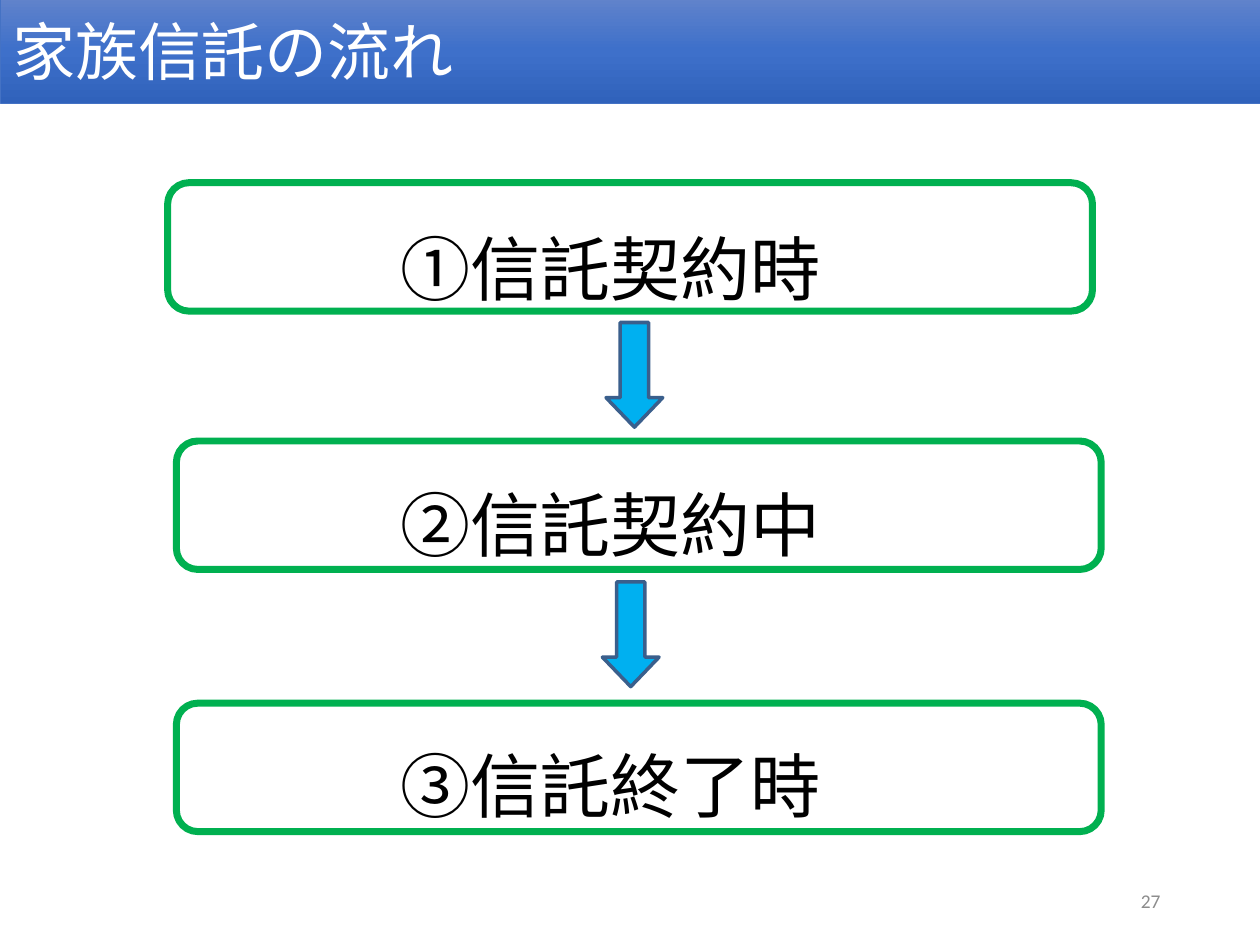
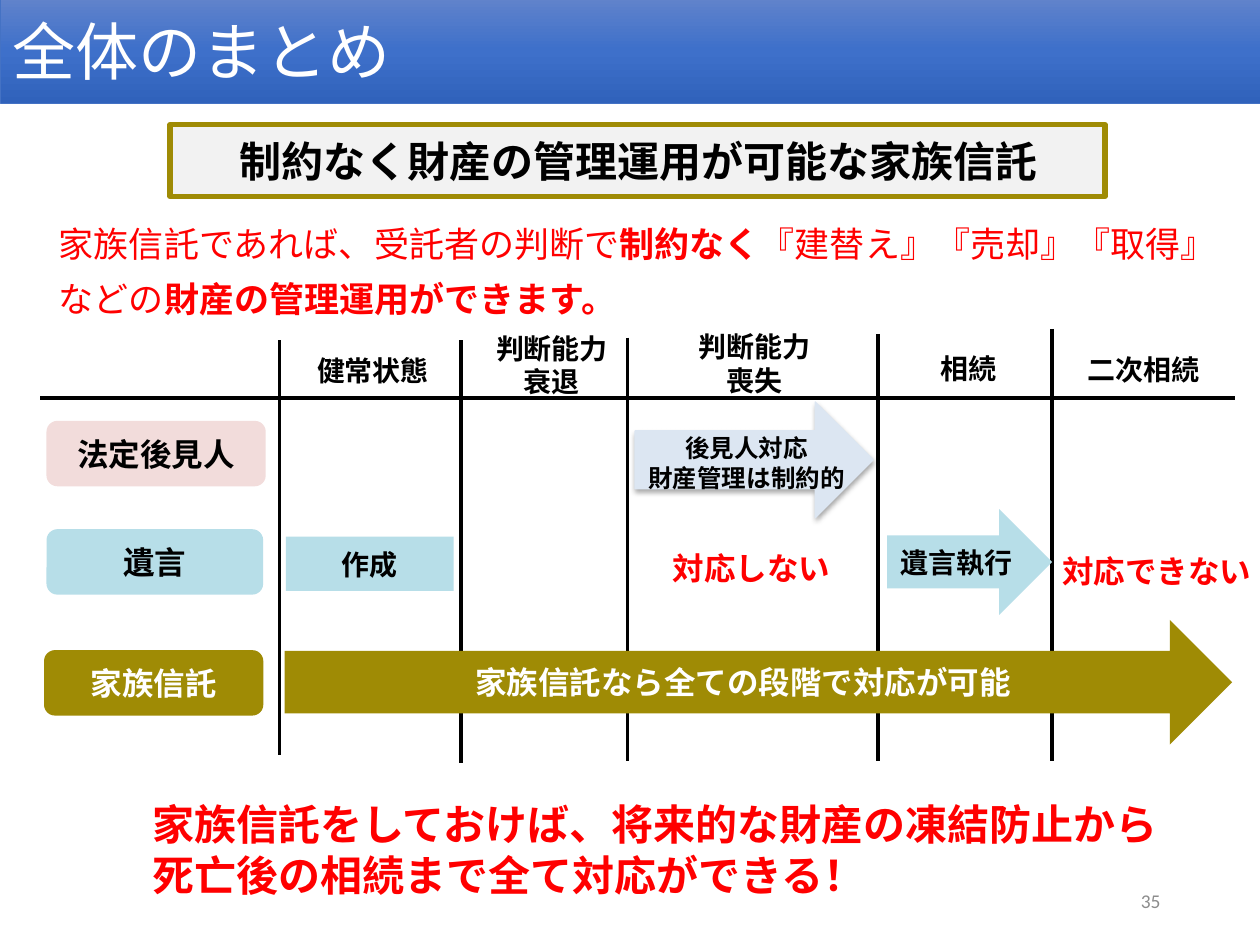
import copy
from dataclasses import dataclass
from typing import NamedTuple, Optional, Union

import lxml.etree
import pptx
import pptx.dml.color
import pptx.enum.shapes
import pptx.enum.text
import pptx.oxml.ns
import pptx.util

Pt = pptx.util.Pt
RGBColor = pptx.dml.color.RGBColor
Geometry = pptx.enum.shapes.MSO_SHAPE
Align = pptx.enum.text.PP_ALIGN
Anchor = pptx.enum.text.MSO_ANCHOR
AutoSize = pptx.enum.text.MSO_AUTO_SIZE
qn = pptx.oxml.ns.qn

BLACK = RGBColor(0x00, 0x00, 0x00)
WHITE = RGBColor(0xFF, 0xFF, 0xFF)
RED = RGBColor(0xFF, 0x00, 0x00)
GREY = RGBColor(0x8C, 0x8C, 0x8C)
PALE_GREY = RGBColor(0xF2, 0xF2, 0xF2)
GREEN = RGBColor(0x00, 0xB0, 0x50)
SKY = RGBColor(0x00, 0xB0, 0xF0)
STEEL = RGBColor(0x3A, 0x5F, 0x8C)
OLIVE = RGBColor(0x9F, 0x8B, 0x05)
PINK = RGBColor(0xF2, 0xDC, 0xDB)
AQUA = RGBColor(0xB7, 0xDE, 0xE8)
PALE_BLUE = RGBColor(0xDC, 0xE6, 0xF2)
BAND_EDGE = RGBColor(0x44, 0x72, 0xC4)
BAND_STOPS = (
    (0, RGBColor(0x61, 0x83, 0xCB)),
    (0.5, RGBColor(0x3E, 0x70, 0xCA)),
    (1, RGBColor(0x30, 0x62, 0xBB)),
)
JAPANESE = "Noto Sans CJK JP"


class Box(NamedTuple):
    left: float
    top: float
    width: float
    height: float


class Span(NamedTuple):
    text: str
    bold: bool


Line = Union[str, tuple[Span, ...]]


@dataclass(frozen=True)
class Style:
    size: float
    color: RGBColor = BLACK
    bold: bool = False
    font: str = JAPANESE
    align: Align = Align.CENTER
    spacing: Optional[float] = None


@dataclass(frozen=True)
class Label:
    box: Box
    lines: tuple[Line, ...]
    style: Style
    anchor: Anchor = Anchor.TOP


@dataclass(frozen=True)
class Panel:
    geometry: Geometry
    box: Box
    fill: Optional[RGBColor] = None
    edge: Optional[RGBColor] = None
    edge_width: float = 0
    text: str = ""
    style: Optional[Style] = None


class Rule(NamedTuple):
    x1: float
    y1: float
    x2: float
    y2: float


TITLE = Style(36, WHITE, align=Align.LEFT)
PAGE = Style(11.1, GREY, font="Calibri", align=Align.RIGHT)
STEP = Style(40, font="Arial", align=Align.LEFT, spacing=1.5)
HEADLINE = Style(24, bold=True, font="Calibri", align=Align.LEFT)
INTRO = Style(20, RED, align=Align.LEFT, spacing=1.3)
STAGE = Style(16, bold=True)
SCHEME = Style(18, bold=True)
SCHEME_LIGHT = Style(18, WHITE, bold=True)
WARNING = Style(18, RED, bold=True)
NOTE = Style(14, bold=True)
CONCLUSION = Style(24, RED, bold=True, font="Arial", align=Align.LEFT)

STEPS = (
    ("①信託契約時", 101.5, Box(95.8, 104.4, 528.5, 73.4)),
    ("②信託契約中", 247.7, Box(100.8, 252, 528.5, 73.4)),
    ("③信託終了時", 396.7, Box(100.8, 401.8, 528.5, 73.4)),
)
STEP_ARROWS = (Box(332.6, 198, 59.8, 32.4), Box(330.5, 346.3, 59.8, 32.4))

RULES = (
    Rule(159.8, 194.4, 159.8, 431.3),
    Rule(263.5, 194.4, 263.5, 436.3),
    Rule(358.6, 193, 358.6, 434.9),
    Rule(501.8, 190.8, 501.8, 434.9),
    Rule(601.2, 187.9, 601.2, 434.9),
    Rule(23, 227.5, 705.6, 227.5),
)
SCHEMES = (
    Panel(Geometry.ROUNDED_RECTANGLE, Box(26.6, 240.5, 125.3, 37.4), PINK,
          text="法定後見人", style=SCHEME),
    Panel(Geometry.ROUNDED_RECTANGLE, Box(26.6, 302.4, 123.8, 37.4), AQUA,
          text="遺言", style=SCHEME),
    Panel(Geometry.ROUNDED_RECTANGLE, Box(25.2, 371.5, 125.3, 37.4), OLIVE,
          text="家族信託", style=SCHEME_LIGHT),
)
COVERAGE = (
    Panel(Geometry.RECTANGLE, Box(163.4, 306.7, 95.8, 31), AQUA, text="作成", style=STAGE),
    Panel(Geometry.RIGHT_ARROW, Box(506.9, 290.9, 94.3, 60.5), AQUA,
          text="遺言執行", style=STAGE),
    Panel(Geometry.RIGHT_ARROW, Box(162.7, 354.2, 541.4, 71.3), OLIVE,
          text="家族信託なら全ての段階で対応が可能", style=SCHEME_LIGHT),
)
GUARDIAN_ARROW = Panel(Geometry.RIGHT_ARROW, Box(362.9, 229.7, 136.1, 66.2),
                       PALE_BLUE, PALE_BLUE, 0.75)
HEADLINE_PANEL = Panel(Geometry.RECTANGLE, Box(97.2, 71.3, 534.2, 41), PALE_GREY, OLIVE, 3,
                       "制約なく財産の管理運用が可能な家族信託", HEADLINE)
SUMMARY_LABELS = (
    Label(Box(144.7, 198.7, 136.8, 26.6), ("健常状態",), STAGE),
    Label(Box(247, 185.8, 136.8, 46), ("判断能力", "衰退"), STAGE),
    Label(Box(386.6, 185, 89.3, 46), ("判断能力", "喪失"), STAGE),
    Label(Box(510.5, 197.3, 86.4, 26.6), ("相続",), STAGE),
    Label(Box(604.8, 198, 97.2, 26.6), ("二次相続",), STAGE),
    Label(Box(360, 244.1, 133.2, 41), ("後見人対応", "財産管理は制約的"), NOTE),
    Label(Box(374.4, 310.3, 110.2, 28.8), ("対応しない",), WARNING),
    Label(Box(598.3, 311.8, 125.3, 28.8), ("対応できない",), WARNING),
    Label(
        Box(26.6, 116.6, 679, 68.4),
        (
            (Span("家族信託であれば、受託者の判断で", False), Span("制約なく", True),
             Span("『建替え』『売却』『取得』", False)),
            (Span("などの", False), Span("財産の管理運用ができます。", True)),
        ),
        INTRO,
    ),
    Label(
        Box(79.9, 452.9, 640.8, 66.2),
        ("家族信託をしておけば、将来的な財産の凍結防止から", "死亡後の相続まで全て対応ができる！"),
        CONCLUSION,
    ),
)


def points(values: tuple[float, ...]) -> list[pptx.util.Length]:
    return [Pt(value) for value in values]


def write(frame: pptx.text.text.TextFrame, lines: tuple[Line, ...], style: Style,
          anchor: Anchor) -> None:
    frame.word_wrap = True
    frame.auto_size = AutoSize.NONE
    frame.vertical_anchor = anchor
    for index, line in enumerate(lines):
        paragraph = frame.add_paragraph() if index else frame.paragraphs[0]
        paragraph.alignment = style.align
        if style.spacing:
            paragraph.line_spacing = style.spacing
        font = paragraph.font
        font.name, font.size, font.bold = style.font, Pt(style.size), style.bold
        font.color.rgb = style.color
        defaults = paragraph._p.pPr.find(qn("a:defRPr"))
        lxml.etree.SubElement(defaults, qn("a:ea"), typeface=JAPANESE)
        if isinstance(line, str):
            paragraph.add_run().text = line
            continue
        for span in line:
            run = paragraph.add_run()
            run.text, run.font.bold = span.text, span.bold


def add_label(slide: pptx.slide.Slide, label: Label) -> None:
    textbox = slide.shapes.add_textbox(*points(label.box))
    write(textbox.text_frame, label.lines, label.style, label.anchor)


def add_panel(slide: pptx.slide.Slide, panel: Panel) -> pptx.shapes.autoshape.Shape:
    shape = slide.shapes.add_shape(panel.geometry, *points(panel.box))
    shape.shadow.inherit = False
    if panel.fill is None:
        shape.fill.background()
    else:
        shape.fill.solid()
        shape.fill.fore_color.rgb = panel.fill
    if panel.edge is None:
        shape.line.fill.background()
    else:
        shape.line.color.rgb = panel.edge
        shape.line.width = Pt(panel.edge_width)
    if panel.style:
        write(shape.text_frame, (panel.text,), panel.style, Anchor.MIDDLE)
    return shape


def add_rule(slide: pptx.slide.Slide, rule: Rule) -> None:
    connector = slide.shapes.add_connector(
        pptx.enum.shapes.MSO_CONNECTOR.STRAIGHT, *points(rule))
    connector.line.color.rgb = BLACK
    connector.line.width = Pt(2)
    lxml.etree.SubElement(connector._element.spPr, qn("a:effectLst"))


def cast_shadow(shape: pptx.shapes.autoshape.Shape) -> None:
    effects = shape._element.spPr.find(qn("a:effectLst"))
    shadow = lxml.etree.SubElement(
        effects, qn("a:outerShdw"), blurRad=str(Pt(3.1)), dist=str(Pt(1.8)),
        dir="5400000", rotWithShape="0")
    color = lxml.etree.SubElement(shadow, qn("a:srgbClr"), val="000000")
    lxml.etree.SubElement(color, qn("a:alpha"), val="35000")


def add_titled_slide(deck: pptx.presentation.Presentation, heading: str,
                     page: str) -> pptx.slide.Slide:
    slide = deck.slides.add_slide(deck.slide_layouts[5])
    band = slide.shapes.title
    band.left, band.top, band.width, band.height = points((0, -1.4, 720, 60.5))
    band.fill.gradient()
    band.fill.gradient_angle = 270
    stops = band._element.spPr.find(".//" + qn("a:gsLst"))
    stops.append(copy.deepcopy(stops[-1]))
    for stop, (position, color) in zip(band.fill.gradient_stops, BAND_STOPS):
        stop.position, stop.color.rgb = position, color
    band.line.color.rgb = BAND_EDGE
    band.line.width = Pt(0.5)
    write(band.text_frame, (heading,), TITLE, Anchor.MIDDLE)
    add_label(slide, Label(Box(508.3, 500.4, 162, 28.8), (page,), PAGE, Anchor.MIDDLE))
    return slide


def build_flow(deck: pptx.presentation.Presentation) -> None:
    slide = add_titled_slide(deck, "家族信託の流れ", "27")
    for text, top, frame in STEPS:
        add_label(slide, Label(Box(221.8, top, 367.9, 74.2), (text,), STEP))
        add_panel(slide, Panel(Geometry.FLOWCHART_ALTERNATE_PROCESS, frame,
                               edge=GREEN, edge_width=4))
    for box in STEP_ARROWS:
        arrow = add_panel(slide, Panel(Geometry.RIGHT_ARROW, box, SKY, STEEL, 2))
        arrow.adjustments[1] = 0.52
        arrow.rotation = 90


def build_summary(deck: pptx.presentation.Presentation) -> None:
    slide = add_titled_slide(deck, "全体のまとめ", "35")
    cast_shadow(add_panel(slide, GUARDIAN_ARROW))
    headline = add_panel(slide, HEADLINE_PANEL)
    headline.text_frame.margin_left = Pt(39.8)
    for rule in RULES:
        add_rule(slide, rule)
    for panel in SCHEMES + COVERAGE:
        add_panel(slide, panel)
    for label in SUMMARY_LABELS:
        add_label(slide, label)


def main() -> None:
    deck = pptx.Presentation()
    deck.slide_width, deck.slide_height = Pt(720), Pt(540)
    build_flow(deck)
    build_summary(deck)
    deck.save("out.pptx")


if __name__ == "__main__":
    main()
